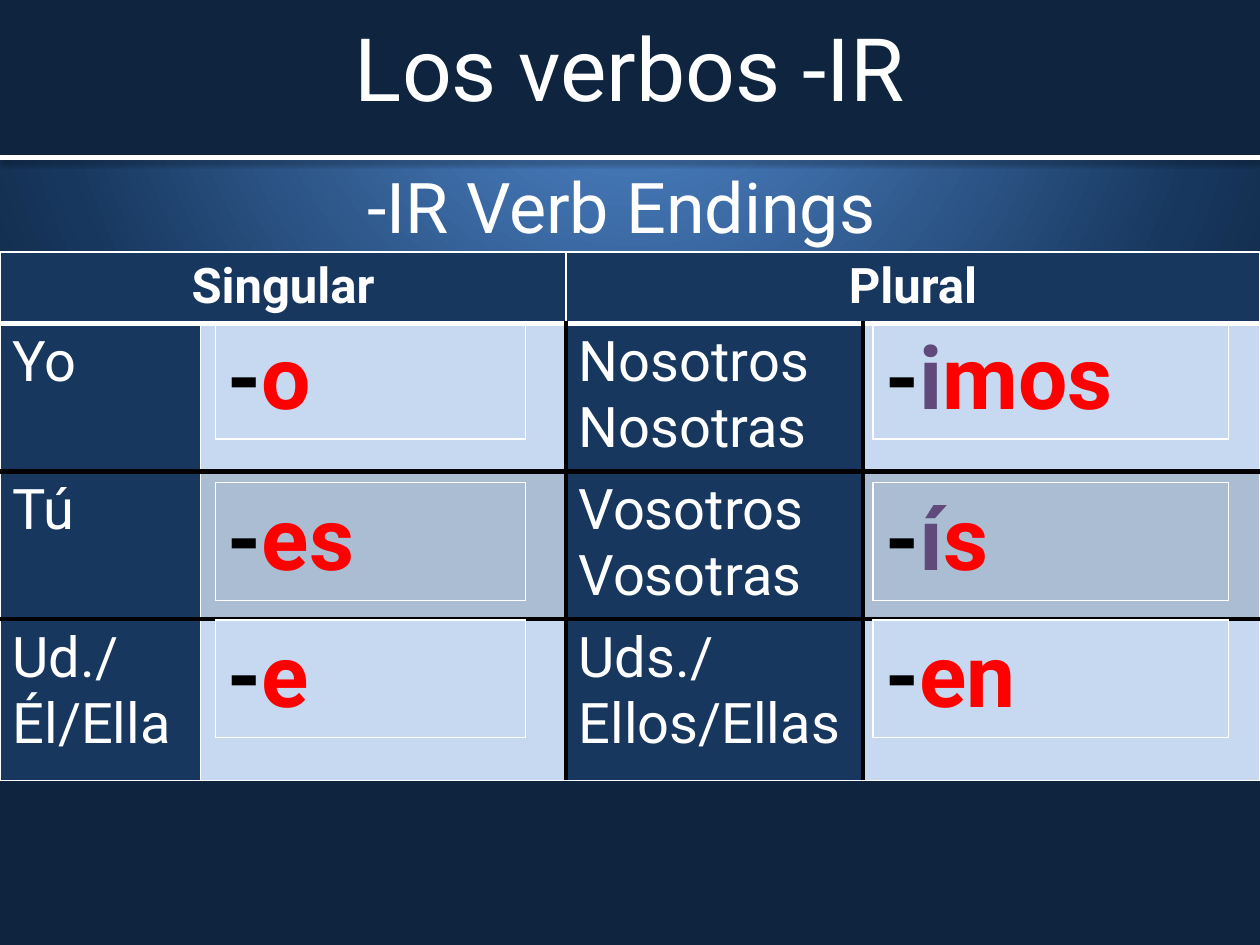
from lxml.etree import SubElement
from pptx import Presentation
from pptx.dml.color import RGBColor
from pptx.enum.shapes import MSO_CONNECTOR as Connector, MSO_SHAPE as Shape
from pptx.enum.text import MSO_ANCHOR as Anchor, PP_ALIGN as Align
from pptx.oxml import parse_xml
from pptx.oxml.ns import nsdecls, qn
from pptx.util import Cm, Pt

NIGHT, NAVY, SKY, STEEL = "0F243E", "17375E", "C6D9F1", "ABBDD2"
WHITE, BLACK, RED, PURPLE = "FFFFFF", "000000", "FF0000", "604A7B"
WIDTH, HEIGHT = 25.4, 19.05
BAND_HEIGHT = 3.18
THIN, THICK = (WHITE, 1), (BLACK, 3)
HEADER_RULE = (WHITE, 3)

COLUMNS = [4.04, 7.37, 5.99, 8]
ROWS = [1.41, 2.98, 2.98, 3.25]
PRONOUNS = [
    (["Yo"], ["Nosotros", "Nosotras"]),
    (["Tú"], ["Vosotros", "Vosotras"]),
    (["Ud./Él/Ella"], ["Uds./Ellos/Ellas"]),
]
ENDING_TOPS = [6.48, 9.73, 12.5]
SINGULAR_ENDINGS = [[("o", RED)], [("es", RED)], [("e", RED)]]
PLURAL_ENDINGS = [
    [("i", PURPLE), ("mos", RED)],
    [("í", PURPLE), ("s", RED)],
    [("en", RED)],
]


def rgb(color):
    return RGBColor.from_string(color)


class VerbSlide:
    font = "Roboto"

    def __init__(self, slide):
        self.slide = slide
        self.shapes = slide.shapes

    def background(self, stops):
        """Fill the background with a circular gradient centred above the slide."""
        self.slide.background.fill.solid()
        solid = self.slide.element.find(".//" + qn("a:solidFill"))
        marks = "".join(
            f'<a:gs pos="{pos * 1000}"><a:srgbClr val="{color}"/></a:gs>'
            for pos, color in stops)
        solid.getparent().replace(solid, parse_xml(
            f'<a:gradFill {nsdecls("a")} rotWithShape="1"><a:gsLst>{marks}</a:gsLst>'
            '<a:path path="circle"><a:fillToRect l="50000" t="-80000" '
            'r="50000" b="180000"/></a:path></a:gradFill>'))

    def add_text(self, paragraph, text, size, color=WHITE, bold=False):
        run = paragraph.add_run()
        run.text = text
        font = run.font
        font.name, font.size, font.bold = self.font, Pt(size), bold
        font.color.rgb = rgb(color)

    def title(self, text, height):
        title = self.shapes.title
        title.left, title.top = Cm(0), Cm(0)
        title.width, title.height = Cm(WIDTH), Cm(height)
        title.text_frame.vertical_anchor = Anchor.MIDDLE
        heading = title.text_frame.paragraphs[0]
        heading.alignment = Align.CENTER
        self.add_text(heading, text, 50)

    def band(self, height, color):
        """Add a full-width band behind the title."""
        band = self.shapes.add_shape(Shape.RECTANGLE, 0, 0, Cm(WIDTH), Cm(height))
        band.shadow.inherit = False
        band.fill.solid()
        band.fill.fore_color.rgb = rgb(color)
        band.line.fill.background()
        self.shapes.title.element.addprevious(band.element)

    def rule(self, top):
        rule = self.shapes.add_connector(
            Connector.STRAIGHT, 0, Cm(top), Cm(WIDTH), Cm(top))
        rule.line.color.rgb = rgb(WHITE)
        rule.line.width = Pt(3)
        rule.element.spPr.append(parse_xml(
            f'<a:effectLst {nsdecls("a")}><a:outerShdw blurRad="{Pt(3.1)}" '
            f'dist="{Pt(1.6)}" dir="5400000" rotWithShape="0">'
            '<a:srgbClr val="000000"><a:alpha val="38000"/></a:srgbClr>'
            '</a:outerShdw></a:effectLst>'))

    def subtitle(self, text, top, height):
        box = self.shapes.add_textbox(0, Cm(top), Cm(WIDTH), Cm(height))
        box.text_frame.word_wrap = True
        line = box.text_frame.paragraphs[0]
        line.alignment = Align.CENTER
        self.add_text(line, text, 40)

    def table(self, left, top, columns, rows):
        frame = self.shapes.add_table(
            len(rows), len(columns), Cm(left), Cm(top), Cm(sum(columns)), Cm(sum(rows)))
        table = frame.table
        table.first_row = table.horz_banding = False
        for column, width in zip(table.columns, columns):
            column.width = Cm(width)
        for row, height in zip(table.rows, rows):
            row.height = Cm(height)
        return table

    def cell(self, cell, fill, lines=(), size=32, bold=False, align=Align.LEFT):
        frame = cell.text_frame
        for number, text in enumerate(lines):
            paragraph = frame.add_paragraph() if number else frame.paragraphs[0]
            paragraph.alignment = align
            self.add_text(paragraph, text, size, bold=bold)
        cell.fill.solid()
        cell.fill.fore_color.rgb = rgb(fill)

    def borders(self, cell, left, right, top, bottom):
        props = cell._tc.get_or_add_tcPr()
        sides = zip(("lnL", "lnR", "lnT", "lnB"), (left, right, top, bottom))
        for position, (tag, (color, width)) in enumerate(sides):
            line = SubElement(props, qn("a:" + tag), w=str(Pt(width)))
            SubElement(SubElement(line, qn("a:solidFill")), qn("a:srgbClr"), val=color)
            props.insert(position, line)

    def ending(self, left, top, width, parts):
        """Add a one-cell clear table holding a hyphen and a coloured ending."""
        cell = self.table(left, top, [width], [2.36]).cell(0, 0)
        cell.fill.background()
        line = cell.text_frame.paragraphs[0]
        for text, color in [("-", BLACK)] + parts:
            self.add_text(line, text, 50, color, bold=True)

    def pronoun_table(self, top):
        table = self.table(0, top, COLUMNS, ROWS)
        for column, heading in ((0, "Singular"), (2, "Plural")):
            table.cell(0, column).merge(table.cell(0, column + 1))
            self.cell(table.cell(0, column), NAVY, [heading], 28, True, Align.CENTER)
        for row, (singular, plural) in enumerate(PRONOUNS, 1):
            blank_fill = SKY if row % 2 else STEEL
            for column, lines in ((0, singular), (2, plural)):
                self.cell(table.cell(row, column), NAVY, lines)
                self.cell(table.cell(row, column + 1), blank_fill)

        across = [THIN, HEADER_RULE, THICK, THICK, THIN]
        header_down = [THIN] * 5
        body_down = [THIN, THIN, THICK, THICK, THIN]
        for row in range(len(ROWS)):
            down = body_down if row else header_down
            for column in range(len(COLUMNS)):
                self.borders(table.cell(row, column), down[column], down[column + 1],
                             across[row], across[row + 1])


def main():
    deck = Presentation()
    deck.slide_width, deck.slide_height = Cm(WIDTH), Cm(HEIGHT)
    verbs = VerbSlide(deck.slides.add_slide(deck.slide_layouts[5]))

    verbs.background([(0, "558ED5"), (75, NAVY), (100, NIGHT)])
    verbs.band(BAND_HEIGHT, NIGHT)
    verbs.title("Los verbos -IR", 2.69)
    verbs.subtitle("-IR Verb Endings ", BAND_HEIGHT, 1.9)
    verbs.rule(BAND_HEIGHT)
    verbs.pronoun_table(5.08)
    for left, width, endings in ((4.34, 6.25, SINGULAR_ENDINGS),
                                 (17.6, 7.16, PLURAL_ENDINGS)):
        for top, parts in zip(ENDING_TOPS, endings):
            verbs.ending(left, top, width, parts)
    deck.save("out.pptx")


if __name__ == "__main__":
    main()
